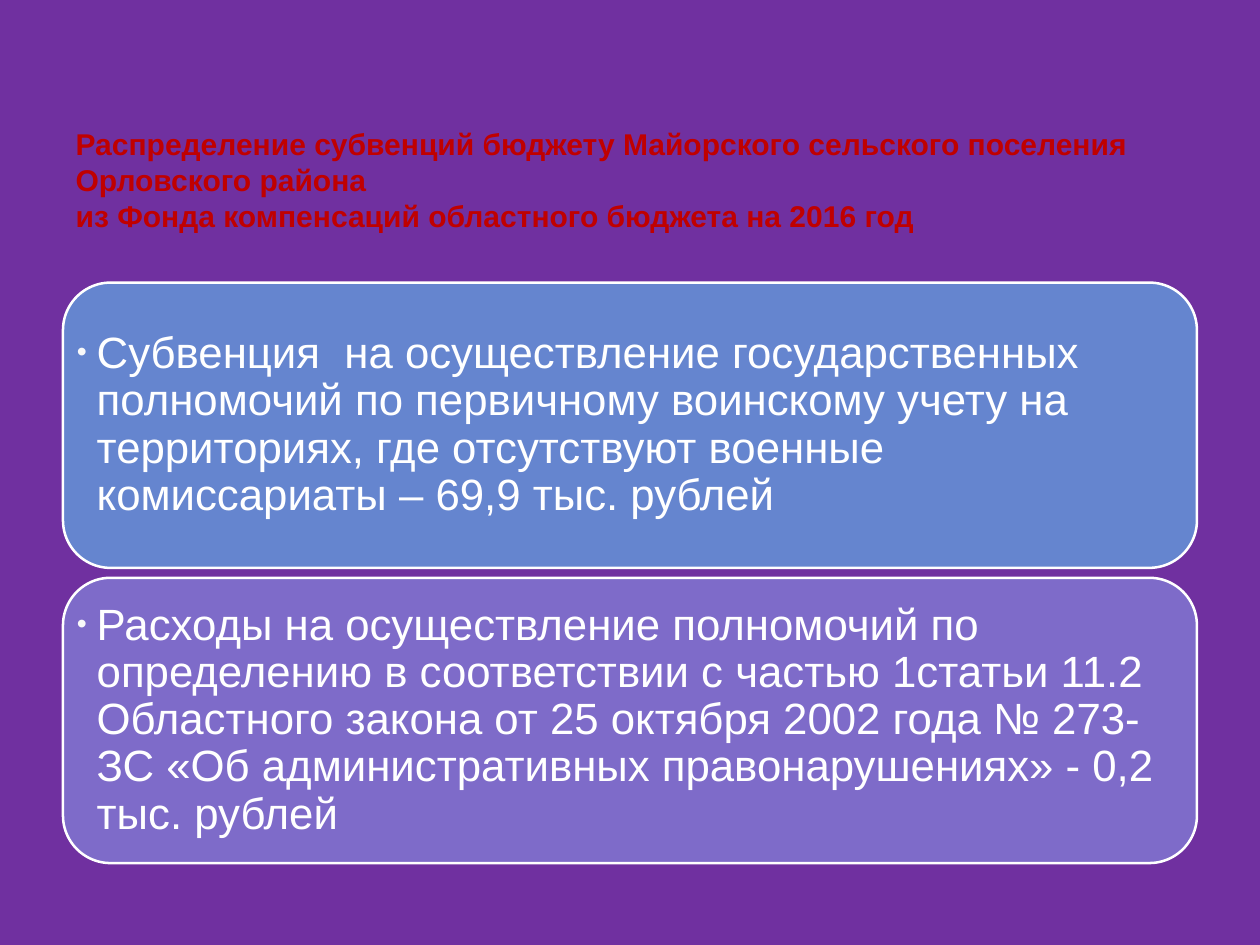
from dataclasses import dataclass

from lxml import etree
from pptx import Presentation
from pptx.dml.color import RGBColor
from pptx.enum.shapes import MSO_SHAPE
from pptx.enum.text import MSO_ANCHOR, PP_ALIGN
from pptx.oxml.ns import qn
from pptx.slide import Slide
from pptx.util import Inches, Pt

ROUNDED = MSO_SHAPE.ROUNDED_RECTANGLE
LEFT, MIDDLE, BOTTOM = PP_ALIGN.LEFT, MSO_ANCHOR.MIDDLE, MSO_ANCHOR.BOTTOM

PURPLE = RGBColor(0x70, 0x30, 0xA0)
RED = RGBColor(0xC0, 0x00, 0x00)
BLUE = RGBColor(0x65, 0x85, 0xCF)
VIOLET = RGBColor(0x7E, 0x6B, 0xC9)
WHITE = RGBColor(0xFF, 0xFF, 0xFF)
BULLET_COLOR = RGBColor(0xF9, 0xF9, 0xF9)

FONT = "Arial"
SLIDE_WIDTH, SLIDE_HEIGHT = Inches(14), Inches(10.5)
MARGIN = int(SLIDE_WIDTH * 0.05)
CONTENT_WIDTH = SLIDE_WIDTH - 2 * MARGIN
CARD_TOP, CARD_HEIGHT, CARD_PITCH = Inches(3.14), Inches(3.17), Inches(3.28)
BULLET_INDENT = Inches(0.22)

TITLE_LINES = (
    "Распределение субвенций бюджету Майорского сельского поселения Орловского района ",
    "из Фонда компенсаций областного бюджета на 2016 год",
)


@dataclass(frozen=True)
class Card:
    text: str
    fill: RGBColor


CARDS = (
    Card("Субвенция  на осуществление государственных полномочий по первичному "
         "воинскому учету на территориях, где отсутствуют военные комиссариаты – "
         "69,9 тыс. рублей", BLUE),
    Card("Расходы на осуществление полномочий по определению в соответствии с "
         "частью 1статьи 11.2 Областного закона от 25 октября 2002 года № 273-ЗС "
         "«Об административных правонарушениях» - 0,2 тыс. рублей", VIOLET),
)


def add_run(para, text: str, size: float, color: RGBColor, bold: bool = False) -> None:
    span = para.add_run()
    span.text = text
    span.font.name = FONT
    span.font.size = Pt(size)
    span.font.bold = bold
    span.font.color.rgb = color


def add_bullet(para) -> None:
    """Give the paragraph a small hanging bullet."""
    properties = para._p.get_or_add_pPr()
    properties.set("marL", str(BULLET_INDENT))
    properties.set("indent", str(-BULLET_INDENT))
    color = etree.SubElement(properties, qn("a:buClr"))
    etree.SubElement(color, qn("a:srgbClr"), val=str(BULLET_COLOR))
    etree.SubElement(properties, qn("a:buSzPct"), val="65000")
    etree.SubElement(properties, qn("a:buFont"), typeface=FONT)
    etree.SubElement(properties, qn("a:buChar"), char="•")


def format_title(slide: Slide) -> None:
    title = slide.shapes.title
    title.left, title.top = MARGIN, int(SLIDE_HEIGHT * 0.04)
    title.width, title.height = CONTENT_WIDTH, Inches(2.64)
    frame = title.text_frame
    frame.word_wrap = True
    frame.vertical_anchor = BOTTOM
    frame.margin_left = frame.margin_right = Inches(0.14)
    frame.margin_top, frame.margin_bottom = Inches(0.07), Inches(0.47)
    para = frame.paragraphs[0]
    para.alignment = LEFT
    for index, line in enumerate(TITLE_LINES):
        if index:
            para.add_line_break()
        add_run(para, line, 24, RED, bold=True)


def add_card(slide: Slide, card: Card, row: int) -> None:
    box = slide.shapes.add_shape(
        ROUNDED, MARGIN, CARD_TOP + row * CARD_PITCH, CONTENT_WIDTH, CARD_HEIGHT)
    box.shadow.inherit = False
    box.fill.solid()
    box.fill.fore_color.rgb = card.fill
    box.line.color.rgb = WHITE
    box.line.width = Pt(2)
    frame = box.text_frame
    frame.word_wrap = True
    frame.vertical_anchor = MIDDLE
    # The rounded corners already keep the text clear of the edges.
    frame.margin_left = frame.margin_right = 0
    frame.margin_top = frame.margin_bottom = 0
    para = frame.paragraphs[0]
    para.alignment = LEFT
    para.line_spacing = 0.9
    add_bullet(para)
    add_run(para, card.text, 35, WHITE)


def main() -> None:
    deck = Presentation()
    deck.slide_width, deck.slide_height = SLIDE_WIDTH, SLIDE_HEIGHT
    slide = deck.slides.add_slide(deck.slide_layouts.get_by_name("Title Only"))
    slide.background.fill.solid()
    slide.background.fill.fore_color.rgb = PURPLE
    format_title(slide)
    for row, card in enumerate(CARDS):
        add_card(slide, card, row)
    deck.save("out.pptx")


if __name__ == "__main__":
    main()
